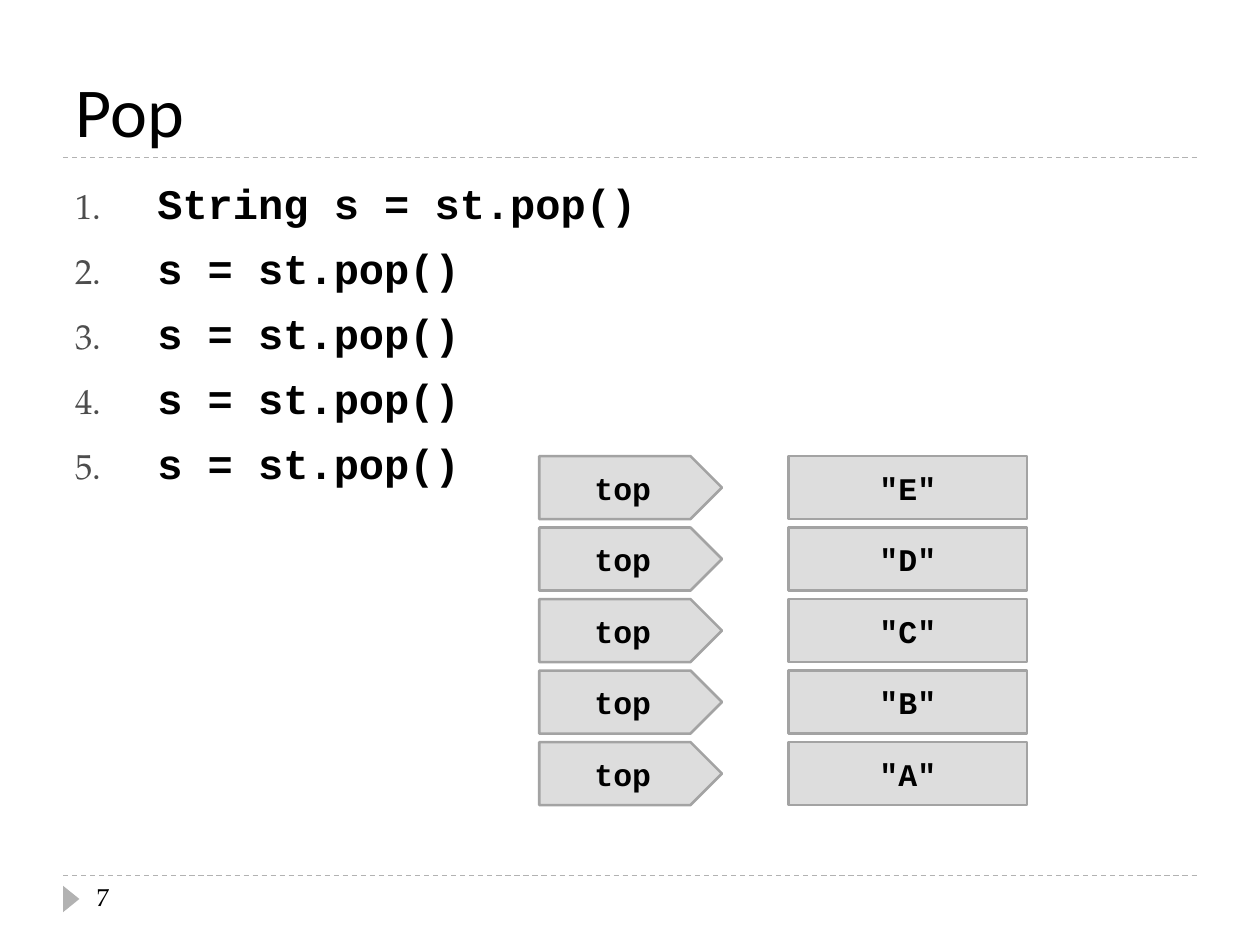
"""Build the slide on popping a stack of strings."""
from lxml import etree
from pptx import Presentation
from pptx.dml.color import RGBColor
from pptx.enum.dml import MSO_LINE
from pptx.enum.shapes import MSO_CONNECTOR, MSO_SHAPE
from pptx.enum.text import MSO_ANCHOR, PP_ALIGN
from pptx.oxml.ns import qn
from pptx.util import Inches, Pt

DASH = MSO_LINE.DASH
LINE = MSO_CONNECTOR.STRAIGHT
RECT, TAG, TRI = MSO_SHAPE.RECTANGLE, MSO_SHAPE.PENTAGON, MSO_SHAPE.ISOSCELES_TRIANGLE
LEFT, MID = PP_ALIGN.LEFT, PP_ALIGN.CENTER
LOW, HALF = MSO_ANCHOR.BOTTOM, MSO_ANCHOR.MIDDLE
HEAD = {"name": "Calibri", "size": Pt(40), "bold": False}
TEXT = {"name": "TeX Gyre Pagella", "size": Pt(26), "bold": False}
PAGE = {**TEXT, "size": Pt(14)}
CODE = {"name": "Courier New", "size": Pt(24), "bold": True}
CELL = {**CODE, "size": Pt(18)}


def tint(code):
    return RGBColor.from_string(code)


def write(para, text, form):
    run = para.add_run()
    run.text = text
    run.font.color.rgb = tint("000000")
    for key, value in form.items():
        setattr(run.font, key, value)


deck = Presentation()
deck.slide_width, deck.slide_height = Inches(10), Inches(7.5)
slide = deck.slides.add_slide(deck.slide_layouts[5])
shapes = slide.shapes

for y in (6.95, 1.25):
    rule = shapes.add_connector(LINE, Inches(0.5), Inches(y), Inches(9.5), Inches(y))
    rule.line.color.rgb = tint("B2B2B2")
    rule.line.width = Pt(0.75)
    rule.line.dash_style = DASH
    etree.SubElement(rule.element.spPr, qn("a:effectLst"))

mark = shapes.add_shape(TRI, Inches(0.46), Inches(7.07), Inches(0.21), Inches(0.13))
mark.rotation = 90
mark.shadow.inherit = False
mark.fill.solid()
mark.fill.fore_color.rgb = tint("B2B2B2")
mark.line.fill.background()

title = shapes.title
title.left, title.top = Inches(0.5), Inches(0.17)
title.width, title.height = Inches(9), Inches(1.08)
title.text_frame.vertical_anchor = LOW
para = title.text_frame.paragraphs[0]
para.alignment = LEFT
write(para, "Pop", HEAD)

body = shapes.add_textbox(Inches(0.5), Inches(1.33), Inches(9), Inches(5.4)).text_frame
body.word_wrap = True
calls = ["String s = st.pop()"] + ["s = st.pop()"] * 4
for i, call in enumerate(calls):
    para = body.add_paragraph() if i else body.paragraphs[0]
    para.space_before = Pt(6)
    for text, form in ((" ", TEXT), (call, CODE), (" ", TEXT)):
        write(para, text, form)
    props = para._p.get_or_add_pPr()
    props.set("marL", str(Inches(0.56)))
    props.set("indent", str(-Inches(0.56)))
    hue = etree.SubElement(props, qn("a:buClr"))
    etree.SubElement(hue, qn("a:srgbClr"), val="4D4D4D")
    etree.SubElement(props, qn("a:buSzPct"), val="76000")
    etree.SubElement(props, qn("a:buAutoNum"), type="arabicPeriod")

page = shapes.add_textbox(Inches(0.67), Inches(6.95), Inches(2.17), Inches(0.4))
page.text_frame.word_wrap = True
write(page.text_frame.paragraphs[0], "7", PAGE)

for kind, x, width, labels in (
    (RECT, 6.26, 1.89, ['"A"', '"B"', '"C"', '"D"', '"E"']),
    (TAG, 4.28, 1.45, ["top"] * 5),
):
    for i, label in enumerate(labels):
        y = 5.89 - 0.5675 * i
        cell = shapes.add_shape(kind, Inches(x), Inches(y), Inches(width), Inches(0.5))
        cell.shadow.inherit = False
        cell.fill.solid()
        cell.fill.fore_color.rgb = tint("DDDDDD")
        cell.line.color.rgb = tint("A3A3A3")
        cell.line.width = Pt(1.5)
        cell.text_frame.vertical_anchor = HALF
        para = cell.text_frame.paragraphs[0]
        para.alignment = MID
        write(para, label, CELL)

deck.save("out.pptx")
